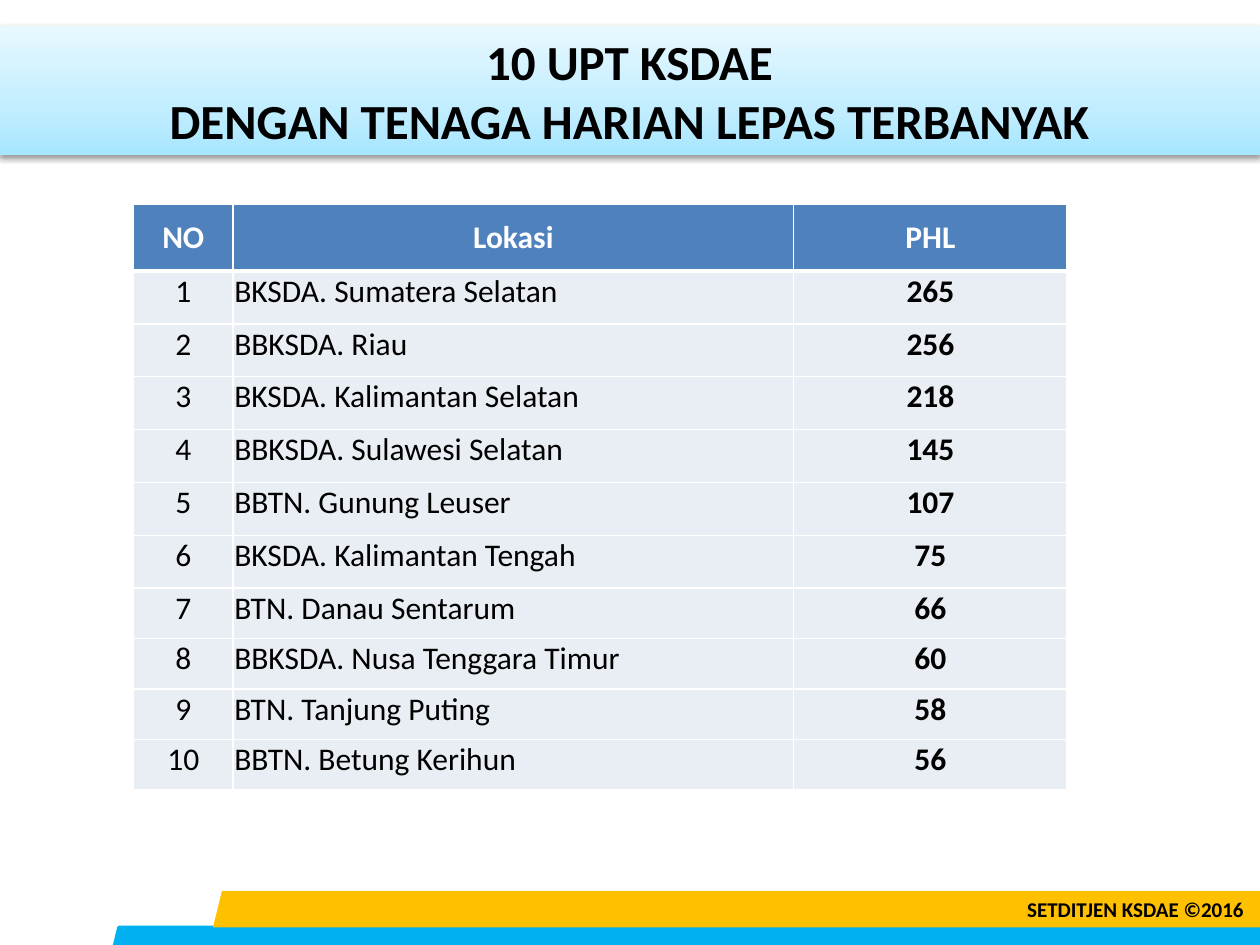
from dataclasses import dataclass

from lxml.etree import SubElement
from pptx import Presentation
from pptx.dml.color import RGBColor
from pptx.enum.shapes import MSO_SHAPE
from pptx.enum.text import MSO_ANCHOR, MSO_AUTO_SIZE, PP_ALIGN
from pptx.oxml import parse_xml
from pptx.oxml.ns import nsdecls, qn
from pptx.util import Inches, Pt


@dataclass(frozen=True)
class Theme:
    font: str = "Calibri"
    ink: str = "000000"
    paper: str = "FFFFFF"
    header: str = "4F81BD"
    row: str = "E9EDF4"
    amber: str = "FFC000"
    blue: str = "00B0F0"
    banner: tuple = ((0, "A7E6FF"), (35, "C1EDFF"), (100, "E7F8FF"))
    title_size: int = 28
    table_size: int = 18
    footer_size: int = 12


class SlideBuilder:
    """Places elements on a grid of 100 columns by 75 rows."""

    def __init__(self, deck, theme):
        self.theme = theme
        self.slide = deck.slides.add_slide(deck.slide_layouts[6])
        self.column = deck.slide_width / 100
        self.row = deck.slide_height / 75

    def box(self, left, top, width, height):
        return (round(left * self.column), round(top * self.row),
                round(width * self.column), round(height * self.row))

    def add_text(self, frame, lines, size, color, bold=True, align=PP_ALIGN.CENTER):
        paragraph = frame.paragraphs[0]
        paragraph.alignment = align
        for index, line in enumerate(lines):
            if index:
                paragraph.add_line_break()
            run = paragraph.add_run()
            run.text = line
            run.font.name = self.theme.font
            run.font.size = Pt(size)
            run.font.bold = bold
            run.font.color.rgb = RGBColor.from_string(color)

    def banner(self, area, lines):
        banner = self.slide.shapes.add_shape(MSO_SHAPE.RECTANGLE, *self.box(*area))
        banner.line.fill.background()
        stops = "".join(
            f'<a:gs pos="{share * 1000}"><a:srgbClr val="{color}"/></a:gs>'
            for share, color in self.theme.banner)
        gradient = parse_xml(
            f'<a:gradFill {nsdecls("a")} rotWithShape="1"><a:gsLst>{stops}</a:gsLst>'
            '<a:lin ang="16200000" scaled="0"/></a:gradFill>')
        shadow = parse_xml(
            f'<a:effectLst {nsdecls("a")}><a:outerShdw blurRad="{Pt(3.1)}" '
            f'dist="{Pt(1.6)}" dir="5400000" rotWithShape="0">'
            f'<a:srgbClr val="{self.theme.ink}"><a:alpha val="38000"/></a:srgbClr>'
            '</a:outerShdw></a:effectLst>')
        outline = banner._element.spPr.find(qn("a:ln"))
        outline.addprevious(gradient)
        outline.addnext(shadow)
        banner.text_frame.word_wrap = True
        banner.text_frame.vertical_anchor = MSO_ANCHOR.MIDDLE
        self.add_text(banner.text_frame, lines, self.theme.title_size, self.theme.ink)

    def stripe(self, area, color, line_width=0):
        stripe = self.slide.shapes.add_shape(MSO_SHAPE.PARALLELOGRAM, *self.box(*area))
        stripe.shadow.inherit = False
        stripe.fill.solid()
        stripe.fill.fore_color.rgb = RGBColor.from_string(color)
        if line_width:
            stripe.line.color.rgb = RGBColor.from_string(color)
            stripe.line.width = Pt(line_width)
        else:
            stripe.line.fill.background()

    def label(self, area, text):
        frame = self.slide.shapes.add_textbox(*self.box(*area)).text_frame
        frame.word_wrap = False
        frame.auto_size = MSO_AUTO_SIZE.SHAPE_TO_FIT_TEXT
        self.add_text(frame, [text], self.theme.footer_size, self.theme.ink,
                      align=PP_ALIGN.RIGHT)

    def cell(self, cell, text, fill, color, bold, align, bottom_line):
        cell.margin_left = cell.margin_right = cell.margin_top = Inches(0.01)
        cell.margin_bottom = 0
        properties = cell._tc.get_or_add_tcPr()
        for side, width in (("L", 1), ("R", 1), ("T", 1), ("B", bottom_line)):
            border = SubElement(properties, qn(f"a:ln{side}"), w=str(Pt(width)))
            solid = SubElement(border, qn("a:solidFill"))
            SubElement(solid, qn("a:srgbClr"), val=self.theme.paper)
        cell.fill.solid()
        cell.fill.fore_color.rgb = RGBColor.from_string(fill)
        self.add_text(cell.text_frame, [text], self.theme.table_size, color, bold, align)

    def table(self, left, top, widths, heights, headings, records):
        area = self.box(left, top, sum(widths), sum(heights))
        table = self.slide.shapes.add_table(len(heights), len(widths), *area).table
        table.horz_banding = False
        for column, width in zip(table.columns, widths):
            column.width = round(width * self.column)
        for row, height in zip(table.rows, heights):
            row.height = round(height * self.row)
        theme = self.theme
        for index, heading in enumerate(headings):
            cell = table.cell(0, index)
            cell.vertical_anchor = MSO_ANCHOR.MIDDLE
            self.cell(cell, heading, theme.header, theme.paper, True,
                      PP_ALIGN.CENTER, 3)
        styles = ((False, PP_ALIGN.CENTER), (False, PP_ALIGN.LEFT),
                  (True, PP_ALIGN.CENTER))
        for number, record in enumerate(records, 1):
            for index, (value, style) in enumerate(zip((number, *record), styles)):
                self.cell(table.cell(number, index), str(value), theme.row,
                          theme.ink, *style, 1)


WORKERS_BY_OFFICE = (
    ("BKSDA. Sumatera Selatan", 265),
    ("BBKSDA. Riau", 256),
    ("BKSDA. Kalimantan Selatan", 218),
    ("BBKSDA. Sulawesi Selatan", 145),
    ("BBTN. Gunung Leuser", 107),
    ("BKSDA. Kalimantan Tengah", 75),
    ("BTN. Danau Sentarum", 66),
    ("BBKSDA. Nusa Tenggara Timur", 60),
    ("BTN. Tanjung Puting", 58),
    ("BBTN. Betung Kerihun", 56),
)


def main():
    deck = Presentation()
    deck.slide_width, deck.slide_height = Inches(10), Inches(7.5)
    theme = Theme()
    builder = SlideBuilder(deck, theme)

    # Title banner
    builder.banner((-0.1, 2.1, 100.1, 10.2),
                   ("10 UPT KSDAE", "DENGAN TENAGA HARIAN LEPAS TERBANYAK"))

    # Footer stripes and owner
    builder.stripe((9.1, 73.6, 92.1, 1.4), theme.blue, line_width=2)
    builder.stripe((16.9, 70.7, 86.6, 2.9), theme.amber)
    builder.label((80.2, 70.7, 19.5, 3), "SETDITJEN KSDAE ©2016")

    # Ranking table
    builder.table(10.6, 16.2, widths=(7.9, 44.5, 21.7),
                  heights=(5.3, *[4.2] * 6, *[4] * 4),
                  headings=("NO", "Lokasi", "PHL"), records=WORKERS_BY_OFFICE)

    deck.save("out.pptx")


if __name__ == "__main__":
    main()
